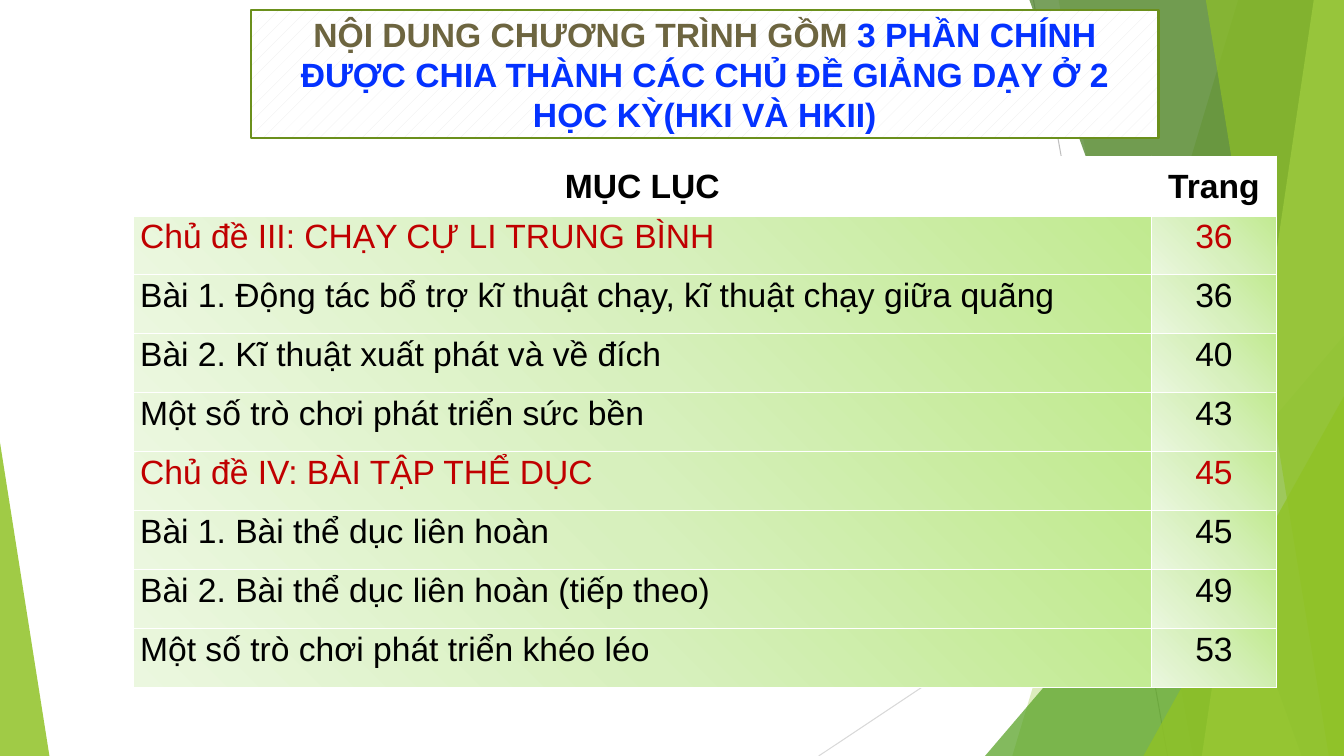
"""Builds a table-of-contents slide with a framed title over green facets."""
import lxml.etree
import pptx
import pptx.dml.color
import pptx.enum.dml
import pptx.enum.shapes
import pptx.enum.text
import pptx.oxml
import pptx.oxml.ns
import pptx.util

WIDTH, HEIGHT = 13.33, 7.5
FONT, SIZE = "Arial", 24
COLOURS = {
    "leaf": "90C226", "grass": "54A021", "forest": "3F7819", "lime": "C0E474",
    "grey": "BFBFBF", "silver": "D9D9D9", "frame": "6B901C", "mist": "EBEBEB",
    "white": "FFFFFF", "black": "000000", "olive": "6D6540", "blue": "0432FF",
    "red": "C00000", "deep": "C1EA90", "middle": "D7F0BD", "pale": "EBF7DF",
}
TITLE = [
    ("NỘI DUNG CHƯƠNG TRÌNH GỒM ", "olive"),
    ("3 PHẦN CHÍNH ĐƯỢC CHIA THÀNH CÁC CHỦ ĐỀ GIẢNG DẠY Ở 2 HỌC KỲ(HKI VÀ HKII)", "blue"),
]
HEADER = ("MỤC LỤC", "Trang")
CONTENTS = [
    ("Chủ đề III: CHẠY CỰ LI TRUNG BÌNH", "36"),
    ("Bài 1. Động tác bổ trợ kĩ thuật chạy, kĩ thuật chạy giữa quãng", "36"),
    ("Bài 2. Kĩ thuật xuất phát và về đích", "40"),
    ("Một số trò chơi phát triển sức bền", "43"),
    ("Chủ đề IV: BÀI TẬP THỂ DỤC", "45"),
    ("Bài 1. Bài thể dục liên hoàn", "45"),
    ("Bài 2. Bài thể dục liên hoàn (tiếp theo)", "49"),
    ("Một số trò chơi phát triển khéo léo", "53"),
]
TITLE_BOX = (2.49, 0.1, 9, 1.27)
TABLE_BOX = (1.32, 1.55, 11.34, 5.27)
COLUMNS = (10.1, 1.24)
LINES = [((10.25, 0), (11.58, HEIGHT), "grey"), ((WIDTH, 4.03), (8.12, HEIGHT), "silver")]
FACETS = [
    ("band", (12.28, 10.04), "leaf", 30),
    ("band", (10.5, 11.83), "leaf", 20),
    ("triangle", (9.77, 3.33, 3.56, 1), "grass", 72),
    ("band", (10.21, 12.91), "forest", 70),
    ("band", (13.03, 11.92), "lime", 70),
    ("band", (11.96, 13.18), "leaf", 65),
    ("triangle", (11.34, 3.93, 1.99, 1), "leaf", 80),
    ("triangle", (0, 4.39, 0.49, 0), "leaf", 85),
]
ALIGN = pptx.enum.text.PP_ALIGN
ANCHOR = pptx.enum.text.MSO_ANCHOR
SHAPE = pptx.enum.shapes.MSO_SHAPE
qn = pptx.oxml.ns.qn


def inches(*values):
    return [pptx.util.Inches(value) for value in values]


def colour(name):
    return pptx.dml.color.RGBColor.from_string(COLOURS[name])


def write(para, text, *, fill="black", bold=False, align=ALIGN.LEFT, before=0, spacing=1.0):
    para.alignment = align
    para.space_before = pptx.util.Pt(before)
    para.line_spacing = spacing
    span = para.add_run()
    span.text = text
    span.font.name, span.font.size, span.font.bold = FONT, pptx.util.Pt(SIZE), bold
    span.font.color.rgb = colour(fill)


def draw_line(page, start, end, fill):
    line = page.shapes.add_connector(
        pptx.enum.shapes.MSO_CONNECTOR.STRAIGHT, *inches(*start, *end))
    line.line.color.rgb = colour(fill)
    line.line.width = pptx.util.Pt(0.75)
    lxml.etree.SubElement(line._element.spPr, qn("a:effectLst"))


def draw_facet(page, kind, place, fill, opacity):
    if kind == "band":
        top, bottom = place
        builder = page.shapes.build_freeform(*inches(top, 0))
        corners = [(WIDTH, 0), (WIDTH, HEIGHT), (bottom, HEIGHT)]
        builder.add_line_segments([inches(*corner) for corner in corners], close=True)
        facet = builder.convert_to_shape()
    else:
        left, top, width, apex = place
        facet = page.shapes.add_shape(
            SHAPE.ISOSCELES_TRIANGLE, *inches(left, top, width, HEIGHT - top))
        facet.adjustments[0] = apex
    facet.shadow.inherit = False
    facet.fill.solid()
    facet.fill.fore_color.rgb = colour(fill)
    facet.line.fill.background()
    tone = facet._element.spPr.find(".//" + qn("a:srgbClr"))
    lxml.etree.SubElement(tone, qn("a:alpha"), val=str(opacity * 1000))


def draw_title(page):
    title = page.shapes.title
    page.shapes._spTree.append(title._element)
    title.left, title.top, title.width, title.height = inches(*TITLE_BOX)
    outline = lxml.etree.SubElement(title._element.spPr, qn("a:prstGeom"), prst="roundRect")
    lxml.etree.SubElement(outline, qn("a:avLst"))
    title.fill.patterned()
    title.fill.pattern = pptx.enum.dml.MSO_PATTERN.PERCENT_5
    title.fill.fore_color.rgb = colour("mist")
    title.fill.back_color.rgb = colour("white")
    title.line.color.rgb = colour("frame")
    title.line.width = pptx.util.Pt(1.5)
    frame = title.text_frame
    frame.word_wrap = True
    frame.auto_size = pptx.enum.text.MSO_AUTO_SIZE.NONE
    frame.vertical_anchor = ANCHOR.MIDDLE
    for text, fill in TITLE:
        write(frame.paragraphs[0], text, fill=fill, bold=True, align=ALIGN.CENTER, before=10)


def style_cell(cell, header):
    cell.margin_left = cell.margin_right = pptx.util.Inches(0.07)
    cell.margin_top = cell.margin_bottom = 0
    cell.vertical_anchor = ANCHOR.MIDDLE if header else ANCHOR.TOP
    properties = cell._tc.get_or_add_tcPr()
    for side in "LRTB":
        points = 3 if header and side == "B" else 1
        border = lxml.etree.SubElement(
            properties, qn("a:ln" + side), w=str(pptx.util.Pt(points)))
        paint = lxml.etree.SubElement(border, qn("a:solidFill"))
        lxml.etree.SubElement(paint, qn("a:srgbClr"), val=COLOURS["white"])
    if header:
        cell.fill.solid()
        cell.fill.fore_color.rgb = colour("white")
        return
    stops = "".join(
        f'<a:gs pos="{place * 1000}"><a:srgbClr val="{COLOURS[name]}"/></a:gs>'
        for place, name in ((0, "deep"), (50, "middle"), (100, "pale")))
    properties.append(pptx.oxml.parse_xml(
        f'<a:gradFill {pptx.oxml.ns.nsdecls("a")}><a:gsLst>{stops}</a:gsLst>'
        '<a:path path="circle"><a:fillToRect l="100000" b="100000"/></a:path></a:gradFill>'))


def draw_table(page):
    rows = [HEADER] + CONTENTS
    table = page.shapes.add_table(len(rows), len(COLUMNS), *inches(*TABLE_BOX)).table
    table.horz_banding = False
    for column, width in zip(table.columns, COLUMNS):
        column.width = pptx.util.Inches(width)
    for row, texts in enumerate(rows):
        header = row == 0
        table.rows[row].height = pptx.util.Inches(TABLE_BOX[3] / len(rows))
        for column, text in enumerate(texts):
            cell = table.cell(row, column)
            style_cell(cell, header)
            write(cell.text_frame.paragraphs[0], text, bold=header, spacing=1.07,
                  fill="red" if texts[0].startswith("Chủ đề") else "black",
                  align=ALIGN.CENTER if header or column else ALIGN.LEFT,
                  before=12 if header and column == 0 else 0)


def main():
    deck = pptx.Presentation()
    deck.slide_width, deck.slide_height = inches(WIDTH, HEIGHT)
    page = deck.slides.add_slide(deck.slide_layouts[5])
    for line in LINES:
        draw_line(page, *line)
    for facet in FACETS:
        draw_facet(page, *facet)
    draw_title(page)
    draw_table(page)
    deck.save("out.pptx")


if __name__ == "__main__":
    main()
